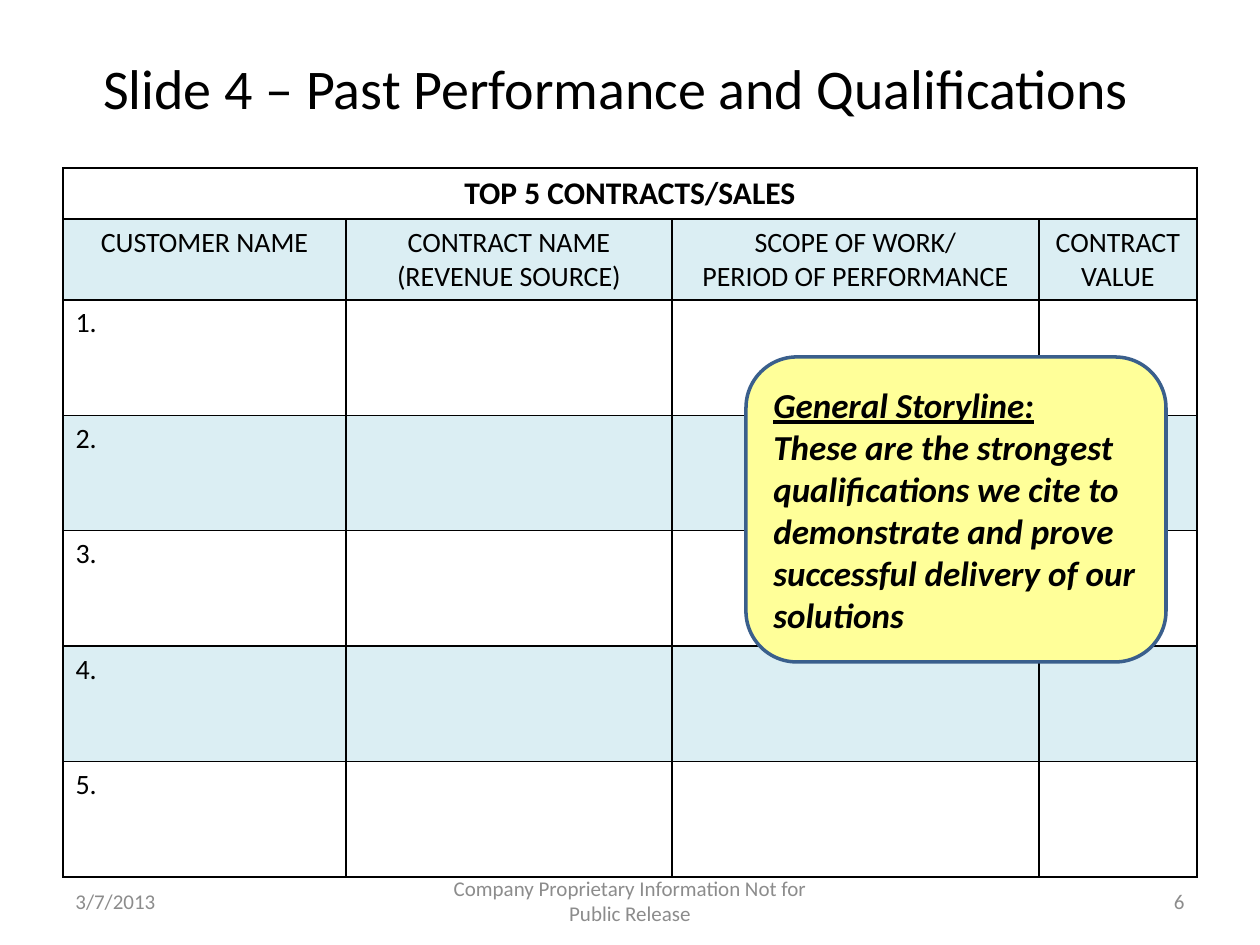
from dataclasses import dataclass

from lxml.etree import SubElement
from pptx import Presentation
from pptx.dml.color import RGBColor
from pptx.enum.shapes import MSO_SHAPE
from pptx.enum.text import MSO_ANCHOR as ANCHOR, PP_ALIGN as ALIGN
from pptx.oxml.ns import qn
from pptx.util import Pt

SCALE = 914400 / 126  # EMU per px


@dataclass(frozen=True)
class Theme:
    font: str = "Calibri"
    ink: str = "000000"
    muted: str = "8C8C8C"
    band: str = "4BACC6"
    band_alpha: int = 20
    note_fill: str = "FFFF99"
    note_line: str = "3A5F8C"
    title: int = 32
    note: int = 20
    heading: int = 18
    body: int = 16
    footer: int = 12


THEME = Theme()
COLUMNS = (283, 326, 367, 158)
HEADERS = (
    "CUSTOMER NAME",
    "CONTRACT NAME\n(REVENUE SOURCE)",
    "SCOPE OF WORK/\nPERIOD OF PERFORMANCE",
    "CONTRACT VALUE",
)
CONTRACTS = 5


def px(n):
    return round(n * SCALE)


def box(*lengths):
    return [px(n) for n in lengths]


def rgb(value):
    return RGBColor.from_string(value)


def set_text(tf, text, size, color=THEME.ink, align=ALIGN.LEFT, bold=False, italic=False):
    tf.text = text
    for p in tf.paragraphs:
        p.alignment = align
        for r in p.runs:
            font = r.font
            font.name, font.size = THEME.font, Pt(size)
            font.bold, font.italic = bold, italic
            font.color.rgb = rgb(color)


def add_text(slide, bounds, text, size, color, align):
    tf = slide.shapes.add_textbox(*box(*bounds)).text_frame
    tf.word_wrap = True
    tf.vertical_anchor = ANCHOR.MIDDLE
    set_text(tf, text, size, color, align)
    return tf


def style_cell(cell, banded):
    # Borders come before the fill in the cell properties
    tc_pr = cell._tc.get_or_add_tcPr()
    for side in ("lnL", "lnR", "lnT", "lnB"):
        ln = SubElement(tc_pr, qn(f"a:{side}"), w=str(Pt(1)))
        SubElement(SubElement(ln, qn("a:solidFill")), qn("a:srgbClr"), val=THEME.ink)
    if banded:
        cell.fill.solid()
        cell.fill.fore_color.rgb = rgb(THEME.band)
        color = tc_pr.find(qn("a:solidFill")).find(qn("a:srgbClr"))
        SubElement(color, qn("a:alpha"), val=str(THEME.band_alpha * 1000))
    else:
        cell.fill.background()


def add_contracts_table(slide):
    heights = [px(51), px(81)] + [px(577) // CONTRACTS] * CONTRACTS
    frame = slide.shapes.add_table(len(heights), len(COLUMNS), *box(63, 168, 1134, 709))
    table = frame.table
    table.first_row = table.horz_banding = False
    for column, width in zip(table.columns, COLUMNS):
        column.width = px(width)
    for i, (row, height) in enumerate(zip(table.rows, heights)):
        row.height = height
        for cell in row.cells:
            style_cell(cell, banded=i % 2 == 1)

    # Heading, column names and numbered rows
    heading = table.cell(0, 0)
    heading.merge(table.cell(0, len(COLUMNS) - 1))
    set_text(heading.text_frame, "TOP 5 CONTRACTS/SALES", THEME.heading,
             align=ALIGN.CENTER, bold=True)
    for j, name in enumerate(HEADERS):
        set_text(table.cell(1, j).text_frame, name, THEME.body, align=ALIGN.CENTER)
    for n in range(1, CONTRACTS + 1):
        set_text(table.cell(n + 1, 0).text_frame, f"{n}.", THEME.body)


def add_note(slide, bounds, heading, body):
    sp = slide.shapes.add_shape(MSO_SHAPE.ROUNDED_RECTANGLE, *box(*bounds))
    sp.shadow.inherit = False
    sp.fill.solid()
    sp.fill.fore_color.rgb = rgb(THEME.note_fill)
    sp.line.color.rgb = rgb(THEME.note_line)
    sp.line.width = Pt(2)
    tf = sp.text_frame
    tf.word_wrap = True
    tf.vertical_anchor = ANCHOR.MIDDLE
    set_text(tf, f"{heading}\n{body}", THEME.note, bold=True, italic=True)
    tf.paragraphs[0].runs[0].font.underline = True


def main():
    prs = Presentation()
    prs.slide_width, prs.slide_height = box(1260, 945)
    slide = prs.slides.add_slide(prs.slide_layouts[6])

    # Title, set slightly left of centre
    title = add_text(slide, (63, 38, 1134, 98), "Slide 4 – Past Performance and Qualifications",
                     THEME.title, THEME.ink, ALIGN.CENTER)
    title.margin_right = px(40)

    add_contracts_table(slide)

    # Footer
    for left, width, text, align in (
        (903, 294, "6", ALIGN.RIGHT),
        (63, 294, "3/7/2013", ALIGN.LEFT),
        (430, 400, "Company Proprietary Information Not for Public Release", ALIGN.CENTER),
    ):
        add_text(slide, (left, 876, width, 50), text, THEME.footer, THEME.muted, align)

    # Callout over the table
    add_note(slide, (746, 357, 420, 305), "General Storyline:",
             "These are the strongest qualifications we cite to demonstrate "
             "and prove successful delivery of our solutions")

    prs.save("out.pptx")


if __name__ == "__main__":
    main()
